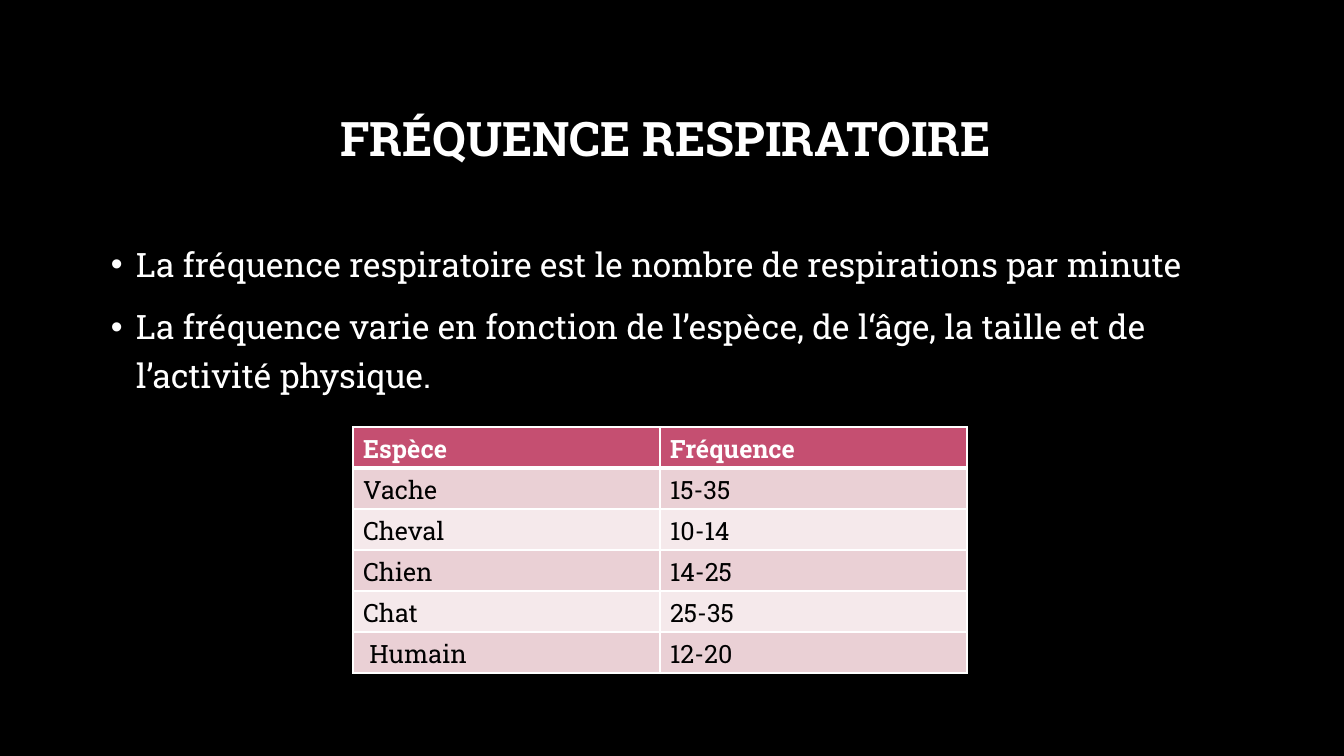
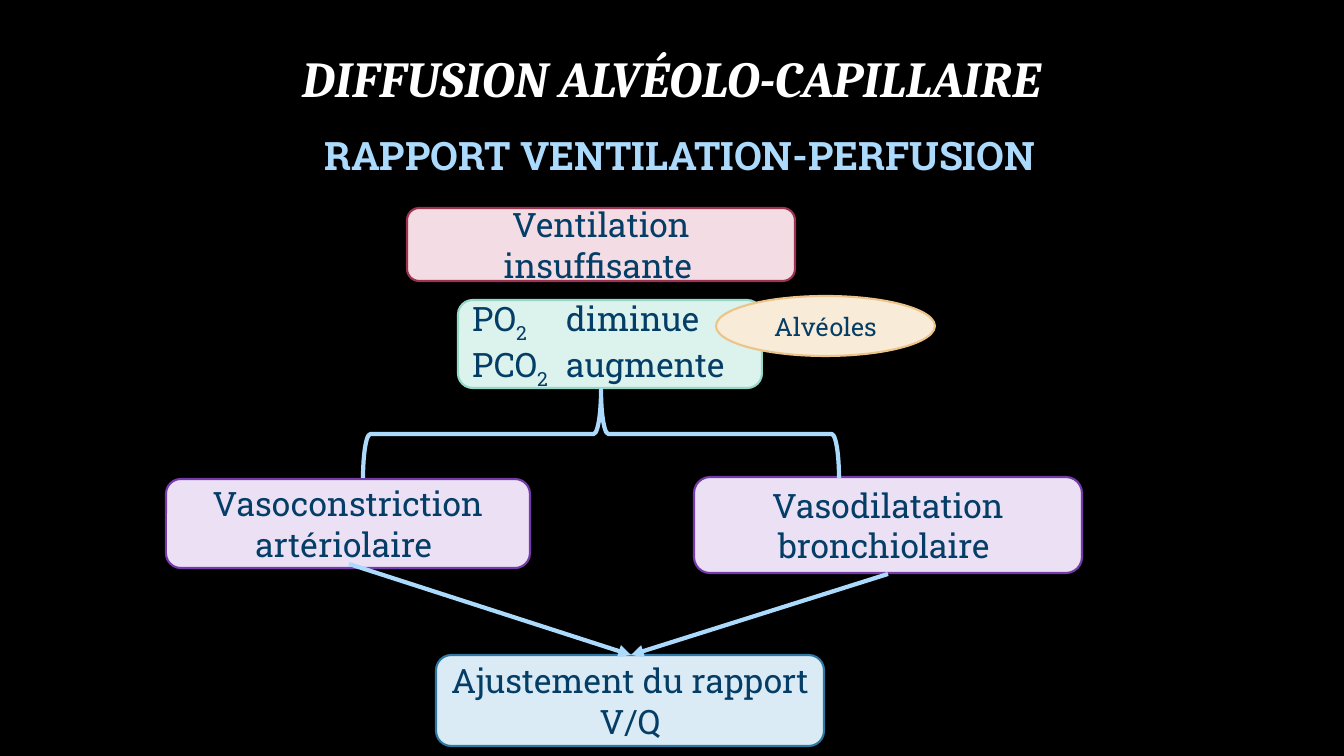
"""Build two slides on respiratory rate and the ventilation-perfusion ratio."""
from lxml import etree
from pptx import Presentation
from pptx.dml.color import RGBColor
from pptx.enum import shapes, text
from pptx.oxml import ns
from pptx.util import Pt

PX = 914400 / 100.8
SERIF, SLAB = "Cambria", "Roboto Slab"
COLOURS = {
    "black": "000000", "white": "FFFFFF", "navy": "043D66", "sky": "ABDAFC",
    "header": "C54F71", "band": "EAD0D5", "band_light": "F5E9EB",
    "mint": "DCF2ED", "mint_edge": "96D8C8", "rose": "F3DCE3", "rose_edge": "9C3351",
    "lilac": "EBE0F4", "lilac_edge": "743BA9", "ice": "DBEBF5", "ice_edge": "2E78A3",
    "cream": "F8EBD8", "cream_edge": "EBC48A",
}
ROUND, OVAL = shapes.MSO_SHAPE.ROUNDED_RECTANGLE, shapes.MSO_SHAPE.OVAL
LEFT, CENTRE = text.PP_ALIGN.LEFT, text.PP_ALIGN.CENTER

TITLE_LEFT, TITLE_WIDTH, TITLE_HEIGHT = 101, 1141, 146
BULLETS = [
    "La fréquence respiratoire est le nombre de respirations par minute",
    "La fréquence varie en fonction de l’espèce, de l‘âge, la taille et de l’activité physique.",
]
RATES = [
    ("Espèce", "Fréquence"), ("Vache", "15-35"), ("Cheval", "10-14"),
    ("Chien", "14-25"), ("Chat", "25-35"), (" Humain", "12-20"),
]
SUB = {"baseline": -25000}
GASES = [
    [("PO", {}), ("2", SUB), ("\tdiminue", {})],
    [("PCO", {}), ("2", SUB), ("\taugmente", {})],
]
GAS_TAB = 94
GAS_BOX = (458, 300, 304, 88)
STEPS = [
    ((407, 208, 388, 73), "rose", [("Ventilation insuffisante", {}), (" ", {"size": 18})]),
    ((166, 479, 364, 89), "lilac", [("Vasoconstriction artériolaire ", {})]),
    ((694, 477, 388, 96), "lilac", [("Vasodilatation bronchiolaire ", {})]),
    ((436, 655, 388, 91), "ice", [("Ajustement du rapport V/Q", {})]),
]
BRACE = (557, 196, 88, 476)
ARROW_STARTS, ARROW_END = [(888, 574), (349, 564)], (631, 655)
ALVEOLI_BOX = (716, 296, 219, 60)


def px(*lengths):
    return [round(length * PX) for length in lengths]


def rgb(name):
    return RGBColor.from_string(COLOURS[name])


def add_xml(parent, tag, **attributes):
    return etree.SubElement(parent, ns.qn(tag), attributes)


def add_span(para, words, size, colour, font=SLAB, bold=False, italic=False, baseline=None):
    span = para.add_run()
    span.text = words
    span.font.size, span.font.name = Pt(size), font
    span.font.bold, span.font.italic = bold, italic
    span.font.color.rgb = rgb(colour)
    if baseline:
        span.font._element.set("baseline", str(baseline))


def fill_text(frame, paragraphs, align=LEFT, anchor=text.MSO_ANCHOR.TOP, **style):
    """Write paragraphs of (words, overrides) runs and return them."""
    frame.word_wrap, frame.vertical_anchor = True, anchor
    for index, runs in enumerate(paragraphs):
        para = frame.add_paragraph() if index else frame.paragraphs[0]
        para.alignment = align
        for words, changes in runs:
            add_span(para, words, **{**style, **changes})
    return frame.paragraphs


def add_page(deck, title, top, **style):
    page = deck.slides.add_slide(deck.slide_layouts[6])
    page.background.fill.solid()
    page.background.fill.fore_color.rgb = rgb("black")
    box = page.shapes.add_textbox(*px(TITLE_LEFT, top, TITLE_WIDTH, TITLE_HEIGHT))
    [para] = fill_text(box.text_frame, [[(title, {})]], CENTRE, text.MSO_ANCHOR.MIDDLE,
                       colour="white", bold=True, **style)
    para.line_spacing = 0.9
    return page


def add_bullets(page, place, lines):
    box = page.shapes.add_textbox(*px(*place))
    paragraphs = [[(line, {})] for line in lines]
    for para in fill_text(box.text_frame, paragraphs, size=24, colour="white"):
        para.line_spacing, para.space_before = 1.2, Pt(10)
        props = para._p.get_or_add_pPr()
        indent = px(25)[0]
        props.set("marL", str(indent))
        props.set("indent", str(-indent))
        add_xml(props, "a:buFont", typeface="Arial")
        add_xml(props, "a:buChar", char="•")


def set_borders(cell, row):
    widths = {"L": 1, "R": 1, "T": 3 if row == 1 else 1, "B": 3 if row == 0 else 1}
    for side, width in widths.items():
        line = add_xml(cell._tc.get_or_add_tcPr(), f"a:ln{side}", w=str(Pt(width)))
        add_xml(add_xml(line, "a:solidFill"), "a:srgbClr", val=COLOURS["white"])


def add_rates(page, left, top, width, row_height):
    table = page.shapes.add_table(
        len(RATES), 2, *px(left, top, width, row_height * len(RATES))).table
    for row, values in enumerate(RATES):
        fill = "header" if row == 0 else "band" if row % 2 else "band_light"
        for column, value in enumerate(values):
            cell = table.cell(row, column)
            set_borders(cell, row)
            cell.fill.solid()
            cell.fill.fore_color.rgb = rgb(fill)
            fill_text(cell.text_frame, [[(value, {})]], size=18, bold=row == 0,
                      colour="black" if row else "white")


def add_box(page, preset, place, fill, paragraphs, align=CENTRE, size=24):
    box = page.shapes.add_shape(preset, *px(*place))
    box.shadow.inherit = False
    box.fill.solid()
    box.fill.fore_color.rgb = rgb(fill)
    box.line.color.rgb, box.line.width = rgb(fill + "_edge"), Pt(1.5)
    return fill_text(box.text_frame, paragraphs, align, text.MSO_ANCHOR.MIDDLE,
                     size=size, colour="navy")


def add_brace(page):
    brace = page.shapes.add_shape(shapes.MSO_SHAPE.LEFT_BRACE, *px(*BRACE))
    brace.rotation = 90
    brace.shadow.inherit = False
    brace.fill.background()
    brace.line.color.rgb, brace.line.width = rgb("sky"), Pt(3)


def add_arrow(page, start, end):
    arrow = page.shapes.add_connector(shapes.MSO_CONNECTOR.STRAIGHT, *px(*start, *end))
    arrow.line.color.rgb, arrow.line.width = rgb("sky"), Pt(3)
    add_xml(arrow.line._get_or_add_ln(), "a:tailEnd", type="triangle")
    add_xml(arrow._element.spPr, "a:effectLst")


def build_rate_page(deck):
    page = add_page(deck, "FRÉQUENCE RESPIRATOIRE ", 68, size=34)
    add_bullets(page, (TITLE_LEFT, 231, TITLE_WIDTH, 407), BULLETS)
    add_rates(page, 353, 427, 614, 41)


def build_diffusion_page(deck):
    page = add_page(deck, "DIFFUSION ALVÉOLO-CAPILLAIRE", 8, size=36, font=SERIF, italic=True)
    subtitle = page.shapes.add_textbox(*px(298, 126, 763, 57))
    fill_text(subtitle.text_frame, [[("RAPPORT VENTILATION-PERFUSION", {})]], CENTRE,
              size=28, colour="sky", bold=True)
    for para in add_box(page, ROUND, GAS_BOX, "mint", GASES, LEFT):
        tabs = add_xml(para._p.get_or_add_pPr(), "a:tabLst")
        add_xml(tabs, "a:tab", pos=str(px(GAS_TAB)[0]), algn="l")
    for place, fill, runs in STEPS:
        add_box(page, ROUND, place, fill, [runs])
    add_brace(page)
    for start in ARROW_STARTS:
        add_arrow(page, start, ARROW_END)
    add_box(page, OVAL, ALVEOLI_BOX, "cream", [[("Alvéoles", {})]], size=18)


def main():
    deck = Presentation()
    deck.slide_width, deck.slide_height = px(1344, 756)
    build_rate_page(deck)
    build_diffusion_page(deck)
    deck.save("out.pptx")


if __name__ == "__main__":
    main()
